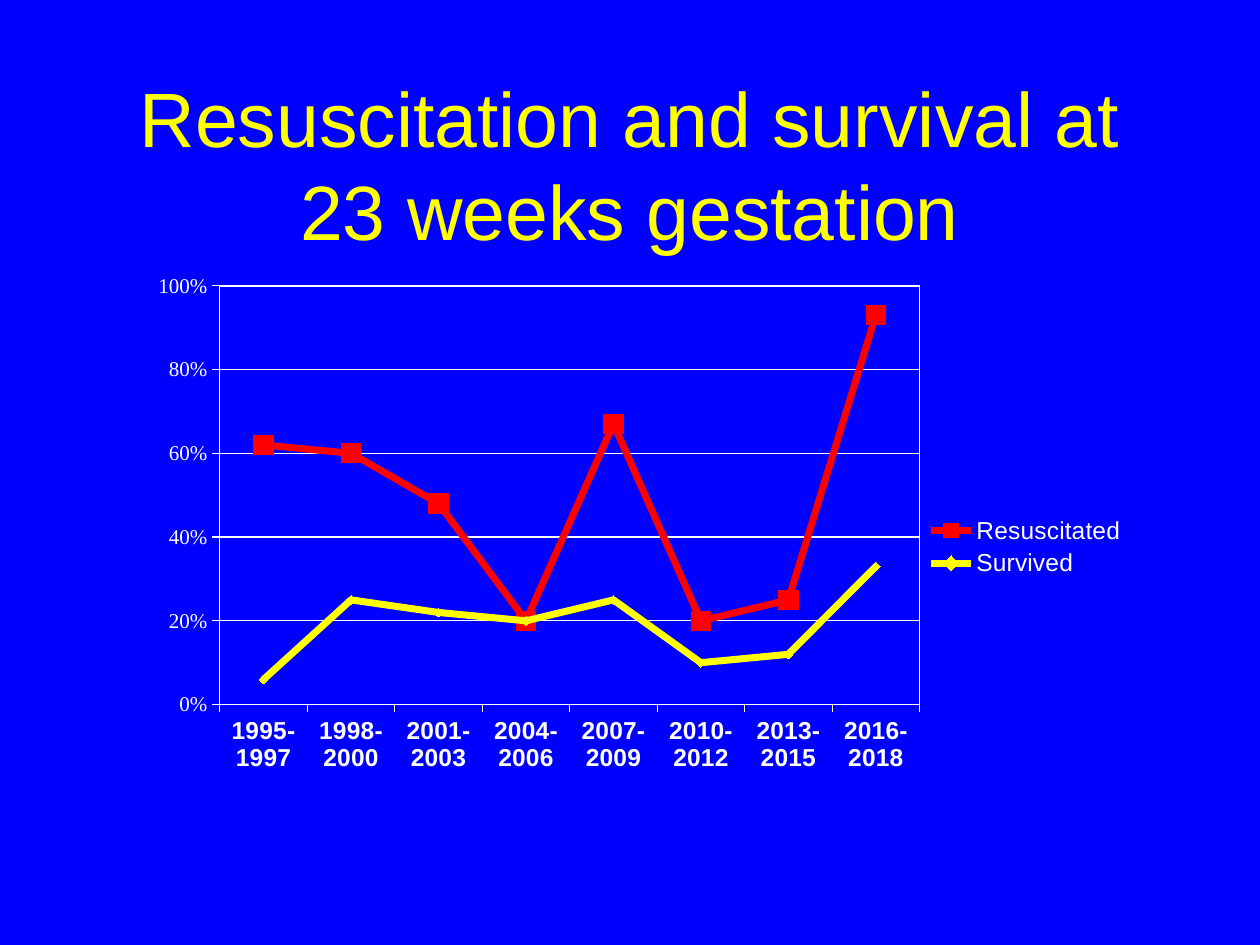
from lxml.etree import SubElement
from pptx import Presentation
from pptx.chart.data import CategoryChartData
from pptx.dml.color import RGBColor
from pptx.enum.chart import XL_CHART_TYPE, XL_LEGEND_POSITION, XL_MARKER_STYLE, XL_TICK_MARK
from pptx.enum.text import MSO_ANCHOR, PP_ALIGN
from pptx.oxml import parse_xml
from pptx.oxml.ns import nsdecls, qn
from pptx.util import Inches, Pt

COLORS = {"background": "0000FF", "title": "FFFF00", "text": "FFFFFF",
          "resuscitated": "FF0000", "survived": "FFFF00"}
PERIODS = [f"{year}-{year + 2}" for year in range(1995, 2017, 3)]
SERIES = [
    ("Resuscitated", [0.62, 0.6, 0.48, 0.2, 0.67, 0.2, 0.25, 0.93],
     COLORS["resuscitated"], XL_MARKER_STYLE.SQUARE, 11),
    ("Survived", [0.06, 0.25, 0.22, 0.2, 0.25, 0.1, 0.12, 0.33],
     COLORS["survived"], XL_MARKER_STYLE.DIAMOND, 5),
]
PLOT_BOX = {"x": 0.12, "y": 0.02, "w": 0.67, "h": 0.77}


def style_font(font, name, size, color, bold=False):
    """Set the typeface, size, colour and weight of a font."""
    font.name, font.size, font.bold = name, Pt(size), bold
    font.color.rgb = RGBColor.from_string(color)


def style_line(line, color, width):
    """Give a line a solid colour and a width in points."""
    line.color.rgb = RGBColor.from_string(color)
    line.width = Pt(width)


def add_title(page, text, box):
    """Place the centred title in the given box."""
    title = page.shapes.title
    title.left, title.top, title.width, title.height = box
    frame = title.text_frame
    frame.text = text
    frame.word_wrap = True
    frame.vertical_anchor = MSO_ANCHOR.MIDDLE
    para = frame.paragraphs[0]
    para.alignment = PP_ALIGN.CENTER
    style_font(para.runs[0].font, "Arial", 44, COLORS["title"])


def frame_plot(chart):
    """Fix the inner plot box and outline it."""
    plot_area = chart._chartSpace.chart.plotArea
    for old in plot_area.findall(qn("c:layout")):
        plot_area.remove(old)
    layout = parse_xml(f"<c:layout {nsdecls('c')}/>")
    manual = SubElement(layout, qn("c:manualLayout"))
    settings = {"layoutTarget": "inner", "xMode": "edge", "yMode": "edge", **PLOT_BOX}
    for tag, value in settings.items():
        SubElement(manual, qn(f"c:{tag}")).set("val", str(value))
    plot_area.insert(0, layout)
    plot_area.append(parse_xml(
        f'<c:spPr {nsdecls("c", "a")}><a:noFill/><a:ln w="9525"><a:solidFill>'
        f'<a:srgbClr val="{COLORS["text"]}"/></a:solidFill></a:ln></c:spPr>'))


def style_axes(chart):
    """Format the period axis and the percentage axis."""
    periods, percent = chart.category_axis, chart.value_axis
    percent.minimum_scale, percent.maximum_scale, percent.major_unit = 0, 1, 0.2
    percent.has_major_gridlines = True
    style_line(percent.major_gridlines.format.line, COLORS["text"], 0.75)
    percent.tick_labels.number_format = "0%"
    percent.tick_labels.number_format_is_linked = False
    for axis in (periods, percent):
        axis.major_tick_mark = XL_TICK_MARK.OUTSIDE
        axis.minor_tick_mark = XL_TICK_MARK.NONE
        style_line(axis.format.line, COLORS["text"], 0.75)
    style_font(periods.tick_labels.font, "Arial", 14, COLORS["text"], True)
    style_font(percent.tick_labels.font, "Times New Roman", 12, COLORS["text"])


def add_survival_chart(page, box):
    """Draw resuscitation and survival by period in the given box."""
    data = CategoryChartData(number_format="0%")
    data.categories = PERIODS
    for name, values, *_ in SERIES:
        data.add_series(name, values)
    chart = page.shapes.add_chart(XL_CHART_TYPE.LINE_MARKERS, *box, data).chart
    style_font(chart.font, "Times New Roman", 10, COLORS["text"])
    chart.has_title = False
    chart.has_legend = True
    chart.legend.position = XL_LEGEND_POSITION.RIGHT
    chart.legend.include_in_layout = False
    style_font(chart.legend.font, "Arial", 14, COLORS["text"])
    chart.plots[0].vary_by_categories = False
    for series, (_, _, color, marker, size) in zip(chart.plots[0].series, SERIES):
        series.smooth = False
        style_line(series.format.line, color, 4)
        series.marker.style, series.marker.size = marker, size
        series.marker.format.fill.solid()
        series.marker.format.fill.fore_color.rgb = RGBColor.from_string(color)
        style_line(series.marker.format.line, color, 0.75)
    style_axes(chart)
    frame_plot(chart)


def main():
    """Build and save the deck."""
    deck = Presentation()
    deck.slide_width, deck.slide_height = Inches(10), Inches(7.5)
    page = deck.slides.add_slide(deck.slide_layouts[5])
    page.background.fill.solid()
    page.background.fill.fore_color.rgb = RGBColor.from_string(COLORS["background"])
    add_title(page, "Resuscitation and survival at 23 weeks gestation",
              [Inches(n) for n in (0.75, 0.67, 8.5, 1.25)])
    add_survival_chart(page, [Inches(n) for n in (0.75, 2.18, 8.29, 4.32)])
    deck.save("out.pptx")


if __name__ == "__main__":
    main()
